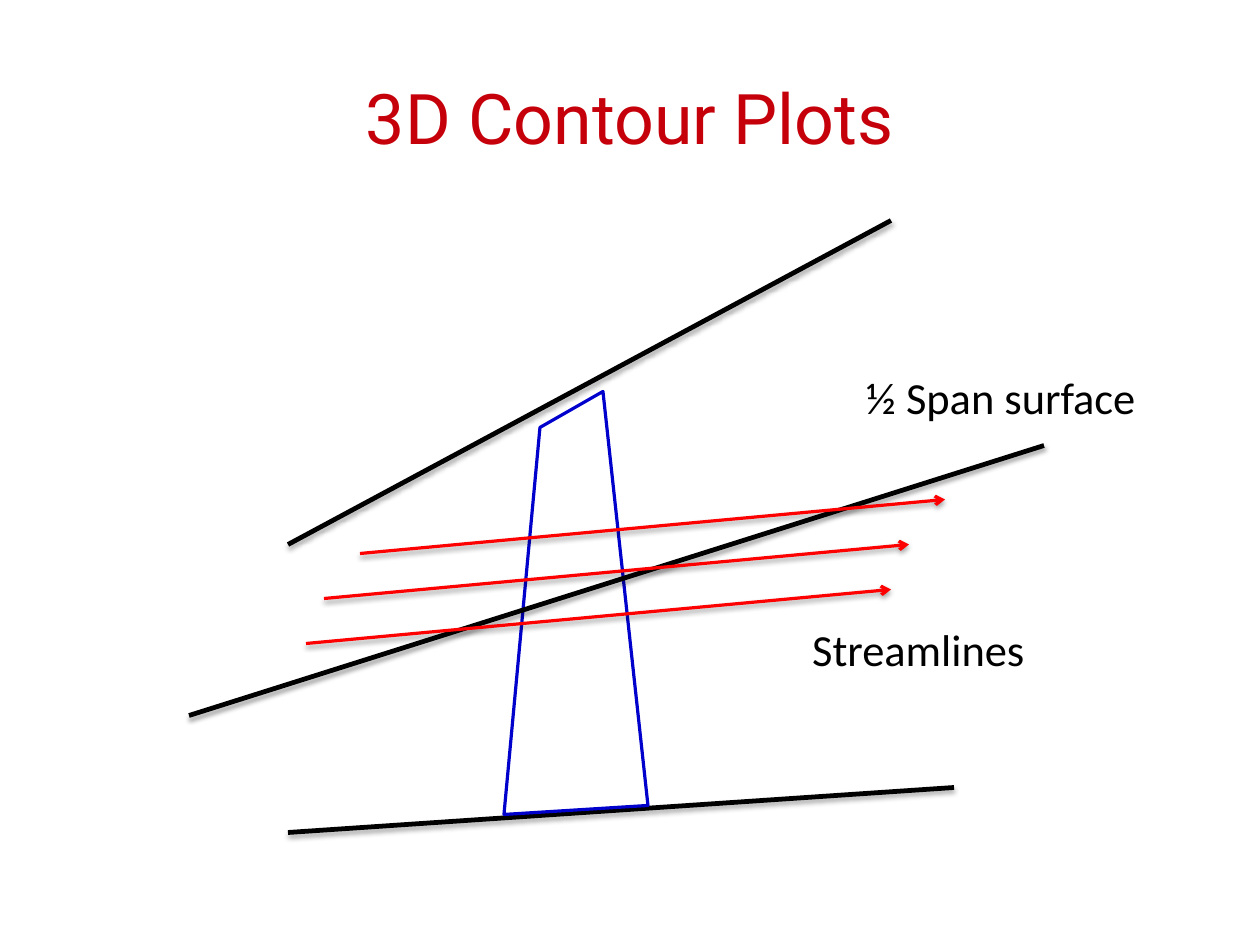
import pptx
import pptx.util
import pptx.dml.color
import pptx.enum.shapes
import pptx.enum.text
import pptx.oxml
import pptx.oxml.ns

COLORS = {"title": "C5000B", "text": "000000", "wall": "000000", "paper": "FFFFFF",
          "blade": "0000CC", "stream": "FF0000", "shadow": "000000"}
COLUMNS, ROWS = 140, 105
WIDTH, HEIGHT = pptx.util.Cm(28), pptx.util.Cm(21)


def color(name):
    """Return the named colour as an RGB value."""
    return pptx.dml.color.RGBColor.from_string(COLORS[name])


def place(column, row):
    """Turn a grid position into slide lengths."""
    return round(column * WIDTH / COLUMNS), round(row * HEIGHT / ROWS)


def add_line(page, start, end, name, weight, distance, opacity, arrow=False):
    """Draw a straight line with a soft shadow below it."""
    line = page.shapes.add_connector(
        pptx.enum.shapes.MSO_CONNECTOR.STRAIGHT, *place(*start), *place(*end))
    line.line.color.rgb = color(name)
    line.line.width = pptx.util.Pt(weight)
    namespace = pptx.oxml.ns.nsdecls("a")
    if arrow:
        line.line._get_or_add_ln().append(
            pptx.oxml.parse_xml(f'<a:tailEnd {namespace} type="arrow"/>'))
    line._element.spPr.append(pptx.oxml.parse_xml(
        f'<a:effectLst {namespace}><a:outerShdw blurRad="{pptx.util.Pt(3.1)}" '
        f'dist="{pptx.util.Pt(distance)}" dir="5400000" rotWithShape="0">'
        f'<a:srgbClr val="{COLORS["shadow"]}"><a:alpha val="{opacity * 1000}"/>'
        '</a:srgbClr></a:outerShdw></a:effectLst>'))


def add_text(page, box, text, font, size, name, title=False):
    """Write one line of text in a grid box, centred for a title."""
    column, row, columns, rows = box
    label = page.shapes.add_textbox(*place(column, row), *place(columns, rows))
    frame = label.text_frame
    frame.word_wrap = True
    para = frame.paragraphs[0]
    para.text = text
    para.font.name = font
    para.font.size = pptx.util.Pt(size)
    para.font.color.rgb = color(name)
    if title:
        frame.margin_left = frame.margin_right = frame.margin_top = frame.margin_bottom = 0
        frame.vertical_anchor = pptx.enum.text.MSO_ANCHOR.MIDDLE
        para.alignment = pptx.enum.text.PP_ALIGN.CENTER


def add_wall(page, box):
    """Draw a channel wall from the lower left to the upper right of a box."""
    column, row, columns, rows = box
    add_line(page, (column, row + rows), (column + columns, row), "wall", 3, 1.8, 35)


def add_blade(page, box):
    """Draw the tapered blade outline inside a box."""
    column, row, columns, rows = box
    corners = [place(column + across, row + down) for across, down in
               ((0, rows), (columns / 4, 4), (columns - 5, 0), (columns, rows - 1))]
    builder = page.shapes.build_freeform(*corners[0])
    builder.add_line_segments(corners[1:], close=True)
    blade = builder.convert_to_shape()
    blade.shadow.inherit = False
    blade.fill.solid()
    blade.fill.fore_color.rgb = color("paper")
    blade.line.color.rgb = color("blade")
    blade.line.width = pptx.util.Pt(2)


def add_streamlines(page, box):
    """Draw three parallel arrows spaced evenly down a box."""
    column, row, columns, rows = box
    length, rise, gap = 65, 6, (rows - 6) / 2
    for index, shift in enumerate((columns - length, 2, 0)):
        left, top = column + shift, row + index * gap
        add_line(page, (left, top + rise), (left + length, top),
                 "stream", 2, 1.6, 38, arrow=True)


def main():
    """Build the slide and save it."""
    deck = pptx.Presentation()
    deck.slide_width, deck.slide_height = WIDTH, HEIGHT
    page = deck.slides.add_slide(deck.slide_layouts[6])
    add_text(page, (7, 4.2, 126, 17.5), "3D Contour Plots", "Roboto", 44, "title", title=True)
    add_wall(page, (32, 24.5, 67, 36))
    add_wall(page, (32, 87.5, 74, 5))
    add_blade(page, (56, 43.5, 16, 47))
    add_wall(page, (21, 49.5, 95, 30))
    add_streamlines(page, (34, 55.5, 71, 16))
    add_text(page, (89, 68.5, 31, 7.25), "Streamlines", "Calibri", 28, "text")
    add_text(page, (95, 40.5, 35, 7.25), "½ Span surface", "Calibri", 28, "text")
    deck.save("out.pptx")


if __name__ == "__main__":
    main()
